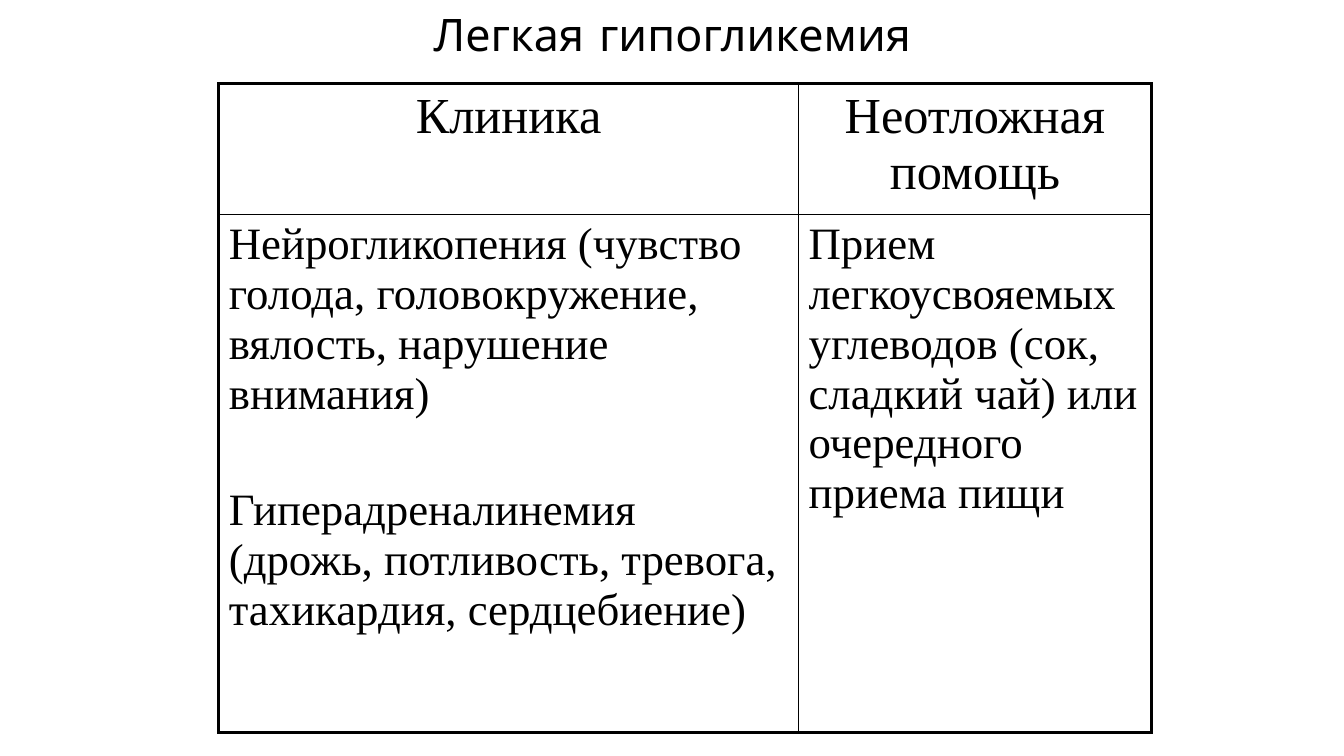
from pptx import Presentation
from pptx.dml.color import RGBColor
from pptx.enum.text import MSO_ANCHOR as Anchor, PP_ALIGN as Align
from pptx.oxml import parse_xml
from pptx.oxml.ns import nsdecls
from pptx.util import Inches, Pt

BLACK = RGBColor(0x00, 0x00, 0x00)
TITLE_FONT = "Comic Neue"
TABLE_FONT = "Times New Roman"
OUTER, INNER = Pt(2.25), Pt(1)

HEADERS = ["Клиника", "Неотложная помощь"]
DETAILS = [
    ["Нейрогликопения (чувство голода, головокружение, вялость, нарушение внимания)",
     "Гиперадреналинемия (дрожь, потливость, тревога, тахикардия, сердцебиение)"],
    ["Прием легкоусвояемых углеводов (сок, сладкий чай) или очередного приема пищи"],
]


class SlideBuilder:
    def __init__(self, page):
        self.page = page

    def add_text(self, frame, texts, font, size, align, gap=0):
        frame.word_wrap = True
        for index, text in enumerate(texts):
            para = frame.add_paragraph() if index else frame.paragraphs[0]
            para.alignment = align
            para.space_before = Pt(gap if index else 0)
            span = para.add_run()
            span.text = text
            span.font.name = font
            span.font.size = Pt(size)
            span.font.bold = False
            span.font.color.rgb = BLACK

    def title(self, text, left, top, width, height):
        box = self.page.shapes.title
        box.left, box.top = Inches(left), Inches(top)
        box.width, box.height = Inches(width), Inches(height)
        box.text_frame.vertical_anchor = Anchor.MIDDLE
        self.add_text(box.text_frame, [text], TITLE_FONT, 32, Align.CENTER)

    def table(self, left, top, widths, heights):
        frame = self.page.shapes.add_table(
            len(heights), len(widths), Inches(left), Inches(top),
            Inches(sum(widths)), Inches(sum(heights)))
        grid = frame.table
        grid.first_row = grid.horz_banding = False
        for column, width in zip(grid.columns, widths):
            column.width = Inches(width)
        for row, height in zip(grid.rows, heights):
            row.height = Inches(height)
        return grid

    def cell(self, grid, row, column, texts, size, align, gap=0):
        cell = grid.cell(row, column)
        cell.fill.background()
        self.add_text(cell.text_frame, texts, TABLE_FONT, size, align, gap)
        last_row, last_column = len(grid.rows) - 1, len(grid.columns) - 1
        on_edge = {"L": column == 0, "R": column == last_column,
                   "T": row == 0, "B": row == last_row}
        self.borders(cell, on_edge)

    def borders(self, cell, on_edge):
        # Border lines come before the fill in the cell properties
        properties = cell._tc.get_or_add_tcPr()
        for index, (side, outer) in enumerate(on_edge.items()):
            width = OUTER if outer else INNER
            properties.insert(index, parse_xml(
                f'<a:ln{side} {nsdecls("a")} w="{int(width)}"><a:solidFill>'
                f'<a:srgbClr val="{BLACK}"/></a:solidFill></a:ln{side}>'))


def main():
    deck = Presentation()
    deck.slide_width, deck.slide_height = Inches(13.33), Inches(7.5)
    builder = SlideBuilder(deck.slides.add_slide(deck.slide_layouts[5]))

    # Title
    builder.title("Легкая гипогликемия", 2.42, 0, 8.5, 0.67)

    # Symptoms and first aid
    grid = builder.table(2.17, 0.83, widths=[5.75, 3.5], heights=[1.3, 5.14])
    for column, (header, details) in enumerate(zip(HEADERS, DETAILS)):
        builder.cell(grid, 0, column, [header], 36, Align.CENTER)
        builder.cell(grid, 1, column, details, 32, Align.LEFT, gap=48)

    deck.save("out.pptx")


if __name__ == "__main__":
    main()
